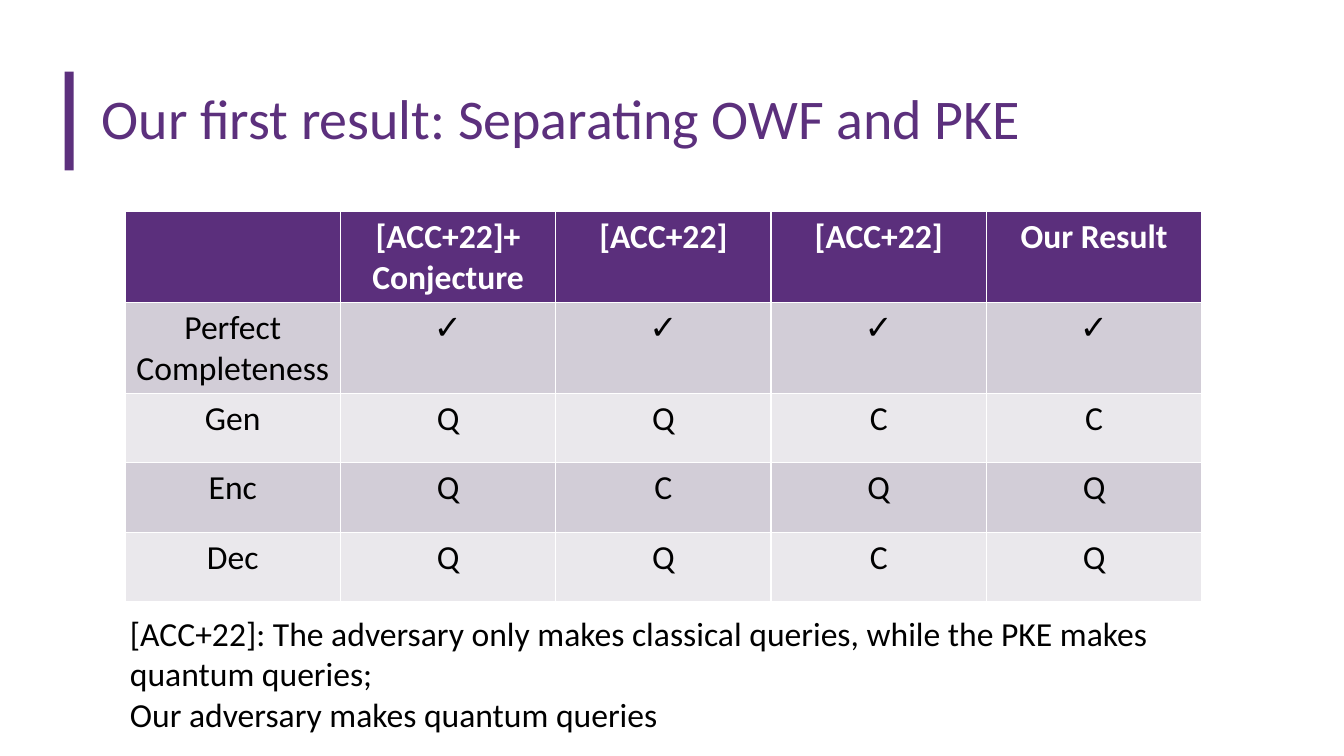
"""Build the slide that compares results separating OWF and PKE."""
from pptx import Presentation
from pptx.dml.color import RGBColor
from pptx.enum.shapes import MSO_SHAPE
from pptx.enum.text import MSO_ANCHOR, PP_ALIGN
from pptx.util import Inches, Pt


def color(hex_string):
    return RGBColor.from_string(hex_string)


def style(paragraph, size, hex_string, bold=False):
    paragraph.font.name = "Calibri"
    paragraph.font.size = Pt(size)
    paragraph.font.bold = bold
    paragraph.font.color.rgb = color(hex_string)


PURPLE = "5C307D"
HEADER_FILL = "5B2F7C"
BAND_FILLS = ["EAE8EC", "D2CDD7"]
ROW_HEIGHTS = [0.84, 0.84, 0.69, 0.69, 0.69]
RESULTS = [
    ["", "[ACC+22]+\nConjecture", "[ACC+22]", "[ACC+22]", "Our Result"],
    ["Perfect Completeness", "✓", "✓", "✓", "✓"],
    ["Gen", "Q", "Q", "C", "C"],
    ["Enc", "Q", "C", "Q", "Q"],
    ["Dec", "Q", "Q", "C", "Q"],
]
NOTES = [
    "[ACC+22]: The adversary only makes classical queries, while the PKE makes quantum queries;",
    "Our adversary makes quantum queries",
]

prs = Presentation()
prs.slide_width = Inches(13.33)
prs.slide_height = Inches(7.5)
slide = prs.slides.add_slide(prs.slide_layouts[6])

accent_bar = slide.shapes.add_shape(
    MSO_SHAPE.RECTANGLE, Inches(0.64), Inches(0.71), Inches(0.09), Inches(0.98))
accent_bar.shadow.inherit = False
accent_bar.fill.solid()
accent_bar.fill.fore_color.rgb = color(PURPLE)
accent_bar.line.fill.background()

title = slide.shapes.add_textbox(
    Inches(0.91), Inches(0.65), Inches(11.51), Inches(1.11)).text_frame
title.word_wrap = True
title.vertical_anchor = MSO_ANCHOR.MIDDLE
title.text = "Our first result: Separating OWF and PKE"
title.paragraphs[0].line_spacing = 0.9
style(title.paragraphs[0], 40, PURPLE)

comparison = slide.shapes.add_table(
    len(RESULTS), len(RESULTS[0]), Inches(1.24), Inches(2.1),
    Inches(10.68), Inches(sum(ROW_HEIGHTS))).table
for row, (height, entries) in enumerate(zip(ROW_HEIGHTS, RESULTS)):
    comparison.rows[row].height = Inches(height)
    is_header = row == 0
    for column, entry in enumerate(entries):
        cell = comparison.cell(row, column)
        cell.text = entry
        cell.fill.solid()
        cell.fill.fore_color.rgb = color(HEADER_FILL if is_header else BAND_FILLS[row % 2])
        for paragraph in cell.text_frame.paragraphs:
            paragraph.alignment = PP_ALIGN.CENTER
            style(paragraph, 24, "FFFFFF" if is_header else "000000", is_header)

query_notes = slide.shapes.add_textbox(
    Inches(1.19), Inches(6.03), Inches(10.68), Inches(1.72)).text_frame
query_notes.word_wrap = True
query_notes.text = "\n".join(NOTES)
for paragraph in query_notes.paragraphs:
    style(paragraph, 24, "000000")

prs.save("out.pptx")
